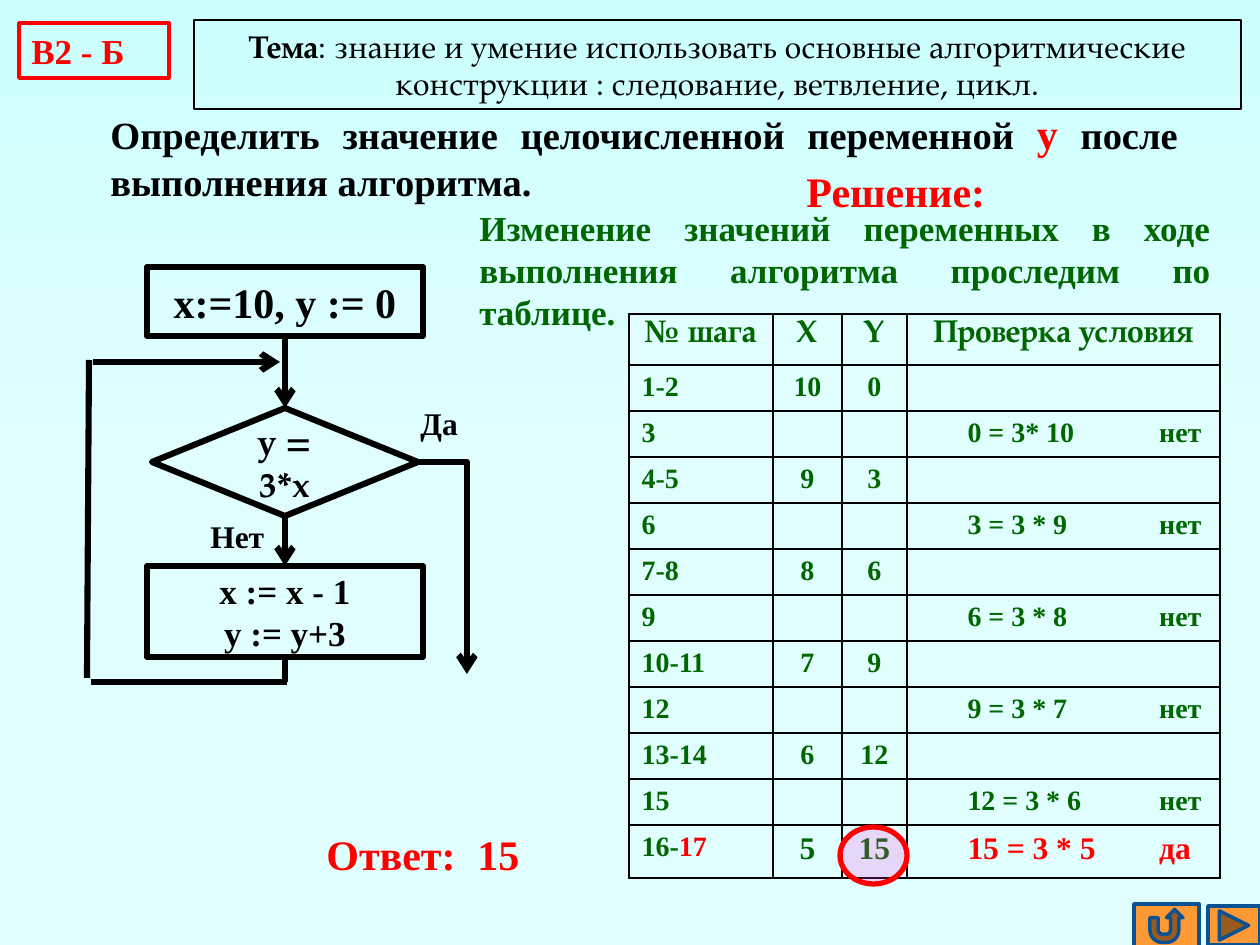
import pptx
import pptx.util
import pptx.dml.color
import pptx.enum.text
import pptx.enum.shapes
import pptx.oxml
import pptx.oxml.ns

PX = 914400 / 126
COLORS = {"ink": "000000", "red": "FF0000", "green": "006600", "cell": "E1FEFF", "sky": "CCFFFF",
          "pink": "FB37DF", "orange": "FF9933", "navy": "0B5292"}
RGB = {name: pptx.dml.color.RGBColor.from_string(value) for name, value in COLORS.items()}
SERIF, PALLADIO = "Times New Roman", "TeX Gyre Pagella"
SHAPE = pptx.enum.shapes.MSO_SHAPE
CONNECTOR = pptx.enum.shapes.MSO_CONNECTOR
ALIGN = pptx.enum.text.PP_ALIGN
ANCHOR = pptx.enum.text.MSO_ANCHOR
NS = pptx.oxml.ns.nsdecls("a")


def write(para, spans, size, font=SERIF, align=ALIGN.LEFT, tab=0):
    para.alignment = align
    for text, color, *style in spans:
        span = para.add_run()
        span.text = text
        span.font.name = font
        span.font.size = pptx.util.Pt(style[0] if style else size)
        span.font.bold = style[1] if len(style) > 1 else True
        span.font.color.rgb = RGB[color]
    if tab:
        para._p.get_or_add_pPr().append(pptx.oxml.parse_xml(
            f'<a:tabLst {NS}><a:tab pos="{round(tab * PX)}" algn="l"/></a:tabLst>'))


def add_shape(kind, place, line, width, fill=None):
    shape = page.shapes.add_shape(kind, *[round(v * PX) for v in place])
    shape.shadow.inherit = False
    if fill:
        shape.fill.solid()
        shape.fill.fore_color.rgb = RGB[fill]
    else:
        shape.fill.background()
    shape.line.color.rgb = RGB[line]
    shape.line.width = pptx.util.Pt(width)
    shape.text_frame.word_wrap = True
    return shape


deck = pptx.Presentation()
deck.slide_width, deck.slide_height = round(1260 * PX), round(945 * PX)
page = deck.slides.add_slide(deck.slide_layouts[6])
backdrop = page.background.fill
backdrop.gradient()
backdrop.gradient_angle = 270
for stop, color, position in zip(backdrop.gradient_stops, ("sky", "cell"), (0, 0.5)):
    stop.color.rgb = RGB[color]
    stop.position = position

labels = [
    ((98, 101, 1092, 111), [("Определить значение целочисленной переменной ", "ink"), ("y", "red", 24),
                            (" после выполнения алгоритма.", "ink")], 22, ALIGN.JUSTIFY, 0),
    ((408, 398, 76, 52), [("Да", "ink")], 18, ALIGN.LEFT, 0),
    ((198, 511, 91, 50), [("Нет", "ink")], 18, ALIGN.LEFT, 0),
    ((794, 159, 207, 63), [("Решение:", "red")], 24, ALIGN.LEFT, 0),
    ((467, 200, 756, 140), [("Изменение значений переменных в ходе выполнения алгоритма проследим по таблице.",
                             "green")], 20, ALIGN.JUSTIFY, 0),
    ((314, 822, 238, 63), [("Ответ:\t15", "red")], 24, ALIGN.LEFT, 151),
]
for place, spans, size, align, tab in labels:
    box = page.shapes.add_textbox(*[round(v * PX) for v in place])
    box.text_frame.word_wrap = True
    write(box.text_frame.paragraphs[0], spans, size, SERIF, align, tab)

nodes = []
for kind, place, lines, size, font in [
    (SHAPE.RECTANGLE, (147, 267, 276, 69), ["x:=10, y := 0"], 24, SERIF),
    (SHAPE.DIAMOND, (152, 408, 266, 108), ["y = 3*x"], 20, PALLADIO),
    (SHAPE.RECTANGLE, (147, 566, 276, 91), ["x := x - 1", "y := y+3"], 20, SERIF),
]:
    node = add_shape(kind, place, "ink", 3.5)
    frame = node.text_frame
    frame.vertical_anchor = ANCHOR.MIDDLE
    if len(lines) > 1:
        frame.margin_left = frame.margin_right = frame.margin_top = frame.margin_bottom = 0
    frame.text = "\n".join(lines)
    for para in frame.paragraphs:
        para.alignment = ALIGN.CENTER
        para.runs[0].font.name = font
        para.runs[0].font.size = pptx.util.Pt(size)
        para.runs[0].font.bold = True
        para.runs[0].font.color.rgb = RGB["ink"]
    nodes.append(node)
start, test, body = nodes

for ends, source, target, arrow in [
    ((285, 336, 285, 408), start, test, True),
    ((285, 516, 285, 566), test, body, True),
    ((285, 657, 285, 682), body, None, False),
    ((287, 682, 91, 682), None, None, False),
    ((87, 678, 89, 360), None, None, False),
    ((93, 362, 280, 362), None, None, True),
    ((418, 462, 467, 674), None, None, True),
]:
    bent = ends[0] != ends[2] and abs(ends[2] - ends[0]) > 2 and ends[1] != ends[3]
    link = page.shapes.add_connector(CONNECTOR.ELBOW if bent else CONNECTOR.STRAIGHT,
                                     *[round(v * PX) for v in ends])
    if bent:
        link._element.spPr.find(pptx.oxml.ns.qn("a:prstGeom")).set("prst", "bentConnector2")
    if source:
        link.begin_connect(source, 2)
    if target:
        link.end_connect(target, 0)
    link.line.color.rgb = RGB["ink"]
    link.line.width = pptx.util.Pt(3.5)
    if arrow:
        link.line._get_or_add_ln().append(pptx.oxml.parse_xml(f'<a:tailEnd {NS} type="arrow"/>'))
    link._element.spPr.append(pptx.oxml.parse_xml(f"<a:effectLst {NS}/>"))

steps = [("№ шага", "X", "Y", "Проверка условия"),
         ("1-2", "10", "0", ""), ("3", "", "", "0 = 3* 10\tнет"),
         ("4-5", "9", "3", ""), ("6", "", "", "3 = 3 * 9\tнет"),
         ("7-8", "8", "6", ""), ("9", "", "", "6 = 3 * 8\tнет"),
         ("10-11", "7", "9", ""), ("12", "", "", "9 = 3 * 7\tнет"),
         ("13-14", "6", "12", ""), ("15", "", "", "12 = 3 * 6\tнет"),
         ("16-17", "5", "15", "15 = 3 * 5\tда")]
widths = [144, 69, 65, 313]
heights = [51] + [46] * 10 + [53]
table = page.shapes.add_table(len(steps), 4, round(629 * PX), round(314 * PX),
                              round(sum(widths) * PX), round(sum(heights) * PX)).table
table.first_row = table.horz_banding = False
for column, width in zip(table.columns, widths):
    column.width = round(width * PX)
for row, height in zip(table.rows, heights):
    row.height = round(height * PX)
last = len(steps) - 1
for r, step in enumerate(steps):
    for c, text in enumerate(step):
        cell = table.cell(r, c)
        cell.margin_bottom = 0
        para = cell.text_frame.paragraphs[0]
        size = 18 if r == 0 or (r == last and c > 0) else 16
        color = "red" if r == last and c == 3 else "green"
        spans = [("16-", "green"), ("17", "red")] if r == last and c == 0 else [(text, color)]
        condition = "\t" in text
        centered = r == 0 or (c > 0 and not condition)
        if text:
            write(para, spans, size, SERIF if r else PALLADIO,
                  ALIGN.CENTER if centered else ALIGN.LEFT, 197 if condition else 0)
        if condition:
            para._p.get_or_add_pPr().set("marL", str(round(48 * PX)))
        props = cell._tc.get_or_add_tcPr()
        for side in ("lnL", "lnR", "lnT", "lnB"):
            props.append(pptx.oxml.parse_xml(
                f'<a:{side} {NS} w="12700"><a:solidFill><a:srgbClr val="{COLORS["ink"]}"/>'
                f'</a:solidFill></a:{side}>'))
        cell.fill.solid()
        cell.fill.fore_color.rgb = RGB["cell"]

ring = add_shape(SHAPE.OVAL, (840, 827, 67, 57), "red", 3, "pink")
tint = ring._element.spPr.find(pptx.oxml.ns.qn("a:solidFill"))[0]
tint.append(pptx.oxml.parse_xml(f'<a:alpha {NS} val="20000"/>'))

badge = add_shape(SHAPE.RECTANGLE, (19, 23, 150, 55), "red", 2)
write(badge.text_frame.paragraphs[0], [("В2 - Б", "red")], 20)
topic = add_shape(SHAPE.RECTANGLE, (194, 20, 1047, 89), "ink", 1)
write(topic.text_frame.paragraphs[0], [
    ("Тема", "ink"),
    (": знание и умение использовать основные алгоритмические конструкции : следование, ветвление, цикл.",
     "ink", 18, False)], 18, PALLADIO, ALIGN.CENTER)

add_shape(SHAPE.ACTION_BUTTON_FORWARD_OR_NEXT, (1208, 906, 52, 39), "navy", 2, "orange")
add_shape(SHAPE.ACTION_BUTTON_RETURN, (1134, 904, 65, 44), "navy", 2, "orange")
deck.save("out.pptx")
